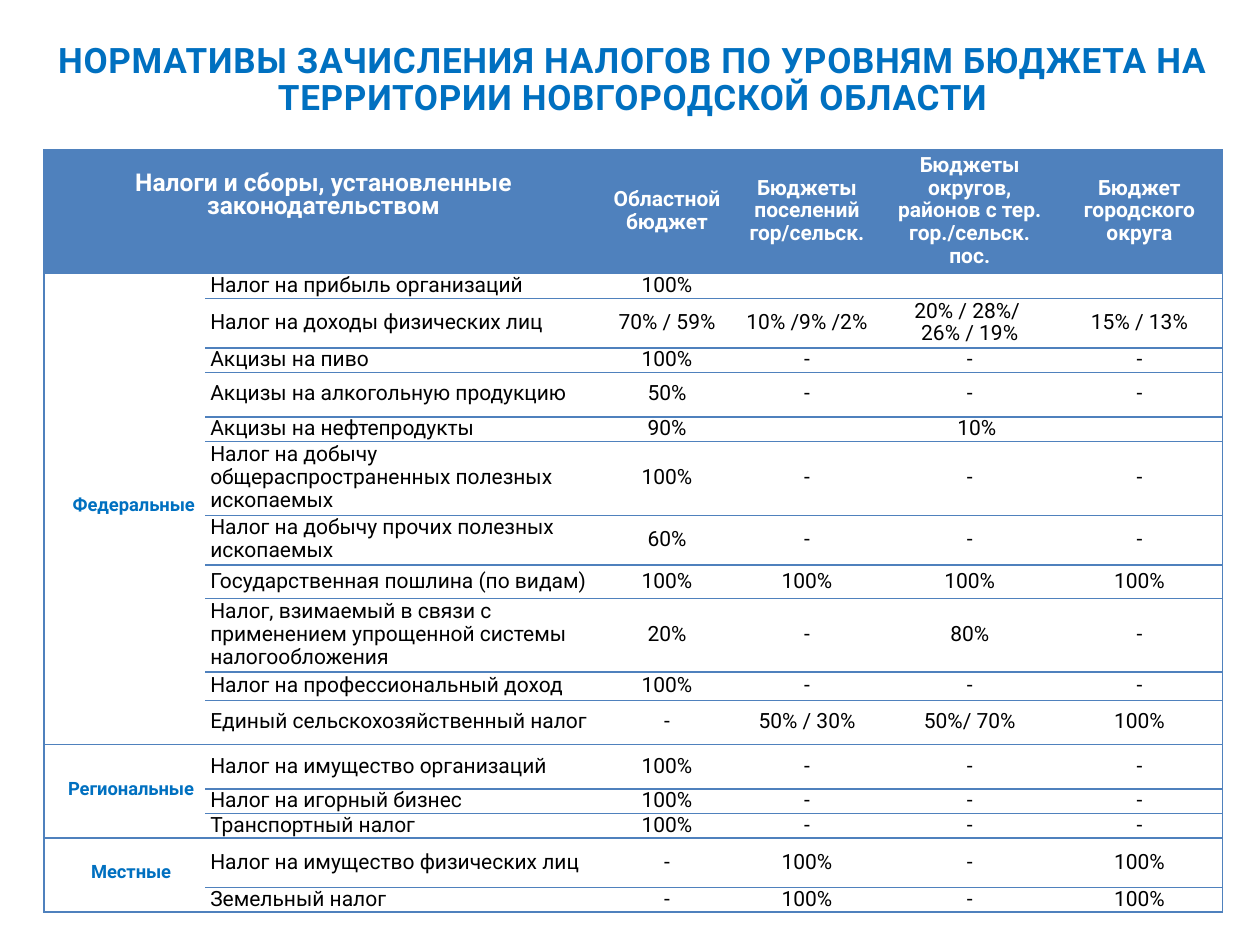
from lxml import etree
from pptx import Presentation
from pptx.dml.color import RGBColor
from pptx.enum.text import MSO_ANCHOR, MSO_AUTO_SIZE, PP_ALIGN
from pptx.oxml.ns import qn
from pptx.util import Pt

LEFT, CENTER = PP_ALIGN.LEFT, PP_ALIGN.CENTER
MIDDLE = MSO_ANCHOR.MIDDLE
GROW = MSO_AUTO_SIZE.SHAPE_TO_FIT_TEXT
FONT = "Roboto"
BLUE, TITLE_BLUE, WHITE, BLACK = "4F81BD", "0070C0", "FFFFFF", "000000"

TITLE = "НОРМАТИВЫ ЗАЧИСЛЕНИЯ НАЛОГОВ ПО УРОВНЯМ БЮДЖЕТА НА ТЕРРИТОРИИ НОВГОРОДСКОЙ ОБЛАСТИ"
COL_WIDTHS = [92, 227.5, 73, 87, 99, 95]
HEADER_HEIGHT = 70.5
HEADER = [
    "Налоги и сборы, установленные законодательством", "", "Областной бюджет",
    "Бюджеты поселений гор/сельск.",
    "Бюджеты округов, районов с тер. гор./сельск. пос.",
    "Бюджет городского округа",
]
TAXES = [
    (14, "Налог на прибыль организаций", "100%", "", "", ""),
    (28.2, "Налог на доходы физических лиц", "70% / 59%", "10% /9% /2%",
     "20% / 28%/ \n26% / 19%", "15% / 13%"),
    (14, "Акцизы на пиво", "100%", "-", "-", "-"),
    (25.4, "Акцизы на алкогольную продукцию", "50%", "-", "-", "-"),
    (14, "Акцизы на нефтепродукты", "90%", "10%", "", ""),
    (42.3, "Налог на добычу общераспространенных полезных ископаемых", "100%", "-", "-", "-"),
    (28.3, "Налог на добычу прочих полезных ископаемых", "60%", "-", "-", "-"),
    (19.4, "Государственная пошлина (по видам)", "100%", "100%", "100%", "100%"),
    (42, "Налог, взимаемый в связи с применением упрощенной системы налогообложения",
     "20%", "-", "80%", "-"),
    (16.3, "Налог на профессиональный доход", "100%", "-", "-", "-"),
    (25.1, "Единый сельскохозяйственный налог", "-", "50% / 30%", "50%/ 70%", "100%"),
    (25.4, "Налог на имущество организаций", "100%", "-", "-", "-"),
    (14, "Налог на игорный бизнес", "100%", "-", "-", "-"),
    (14, "Транспортный налог", "100%", "-", "-", "-"),
    (28.3, "Налог на имущество физических лиц", "-", "100%", "-", "100%"),
    (14, "Земельный налог", "-", "100%", "-", "100%"),
]
GROUP_SIZES = [11, 3, 2]
SHARED_ROW = 5
GROUP_LABELS = [
    ("Федеральные", 17.3, 278),
    ("Региональные", 15.8, 440.6),
    ("Местные", 15.8, 488.2),
]


def color(value):
    """Return the RGB colour for a hex string."""
    return RGBColor.from_string(value)


def style_paragraph(p, size, font_color, bold, align):
    """Set alignment and font of a paragraph."""
    p.alignment = align
    p.font.name = FONT
    p.font.size = Pt(size)
    p.font.bold = bold
    p.font.color.rgb = color(font_color)


def add_text(slide, box, text, size):
    """Add a bold centred text box and return its text frame."""
    tf = slide.shapes.add_textbox(*map(Pt, box)).text_frame
    tf.word_wrap = True
    tf.text = text
    style_paragraph(tf.paragraphs[0], size, TITLE_BLUE, True, CENTER)
    return tf


def set_borders(cell, sides):
    """Draw the named sides of a cell and clear the others."""
    tc_pr = cell._tc.get_or_add_tcPr()
    for i, side in enumerate("LRTB"):
        ln = etree.Element(qn(f"a:ln{side}"), w=str(Pt(1)))
        if side in sides:
            fill = etree.SubElement(ln, qn("a:solidFill"))
            etree.SubElement(fill, qn("a:srgbClr"), val=BLUE)
        else:
            etree.SubElement(ln, qn("a:noFill"))
        tc_pr.insert(i, ln)


def fill_cell(cell, text, header, align, size):
    """Write and style one table cell."""
    cell.text = text
    cell.vertical_anchor = MIDDLE
    cell.margin_left = cell.margin_right = Pt(3)
    cell.margin_top = cell.margin_bottom = 0
    cell.fill.solid()
    cell.fill.fore_color.rgb = color(BLUE if header else WHITE)
    for p in cell.text_frame.paragraphs:
        p.line_spacing = Pt(13)
        style_paragraph(p, size, WHITE if header else BLACK, header, align)


def add_tax_table(slide, box):
    """Build the table of tax shares by budget level."""
    rows = [HEADER] + [["", *tax[1:]] for tax in TAXES]
    heights = [HEADER_HEIGHT] + [tax[0] for tax in TAXES]
    last_col = len(HEADER) - 1
    table = slide.shapes.add_table(len(rows), len(HEADER), *map(Pt, box)).table
    table.first_row = table.horz_banding = False
    for col, width in zip(table.columns, COL_WIDTHS):
        col.width = Pt(width)
    for row, height in zip(table.rows, heights):
        row.height = Pt(height)

    starts, ends = {0}, {0}
    first = 1
    for size in GROUP_SIZES:
        last = first + size - 1
        starts.add(first)
        ends.add(last)
        table.cell(first, 0).merge(table.cell(last, 0))
        first = last + 1
    table.cell(0, 0).merge(table.cell(0, 1))
    table.cell(SHARED_ROW, 3).merge(table.cell(SHARED_ROW, last_col))

    for r, values in enumerate(rows):
        for c, text in enumerate(values):
            cell = table.cell(r, c)
            align = LEFT if r and c == 1 else CENTER
            fill_cell(cell, text, r == 0, align, 14 if r == c == 0 else 12)
            sides = "L" if c == 0 else ""
            if c + cell.span_width - 1 == last_col or c == last_col:
                sides += "R"
            if c or r in starts:
                sides += "T"
            if c or r in ends or cell.is_merge_origin:
                sides += "B"
            set_borders(cell, sides)
    table.cell(0, 0).margin_bottom = Pt(16)


def add_title(slide, box):
    """Add the slide title."""
    p = add_text(slide, box, TITLE, 20).paragraphs[0]
    p.line_spacing = 0.9
    p.runs[0]._r.get_or_add_rPr().set("spc", "40")


def add_group_labels(slide, width, height):
    """Add the tax level names over the first table column."""
    for text, left, top in GROUP_LABELS:
        tf = add_text(slide, (left, top, width, height), text, 10.5)
        tf.auto_size = GROW
        tf.margin_right = Pt(17)


def main():
    """Build and save the slide."""
    prs = Presentation()
    prs.slide_width, prs.slide_height = Pt(720), Pt(540)
    slide = prs.slides.add_slide(prs.slide_layouts[6])
    add_title(slide, (20.2, 20.9, 682.6, 20.9))
    add_tax_table(slide, (25.2, 85.7, 673.5, 435.2))
    add_group_labels(slide, 128.2, 20.2)
    prs.save("out.pptx")


if __name__ == "__main__":
    main()
